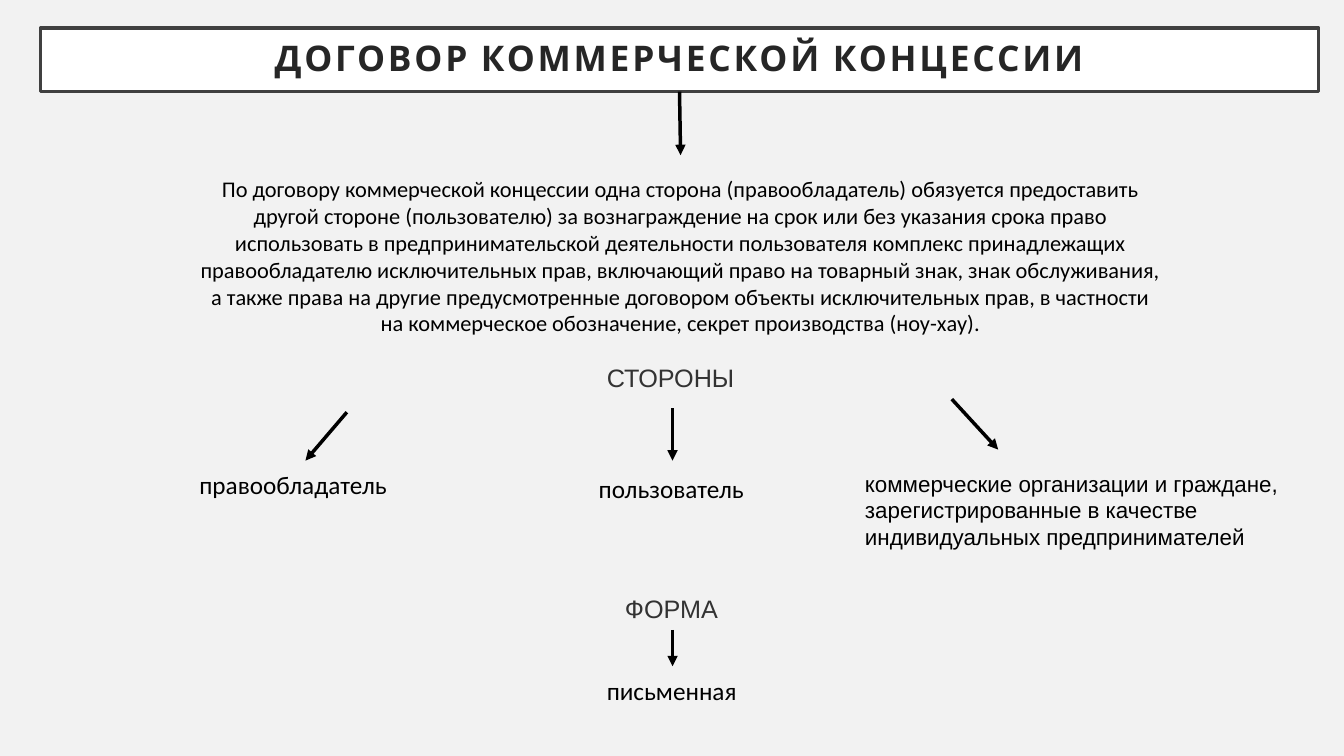
from dataclasses import dataclass

from lxml import etree
from pptx import Presentation
from pptx import util as u
from pptx.dml.color import RGBColor
from pptx.enum import shapes, text
from pptx.oxml import ns

WIDTH, HEIGHT = u.Inches(13.33), u.Inches(7.5)
BLACK, GREY = "000000", "333333"


@dataclass(frozen=True)
class Label:
    """Text with its box in percent of the slide's width and height."""
    words: str
    left: float
    top: float
    width: float
    height: float = 5.33
    font: str = "Calibri"
    size: float = 18
    color: str = BLACK
    wrap: bool = False
    centred: bool = False


@dataclass(frozen=True)
class Arrow:
    """Arrow from start to tip in percent of the slide's width and height."""
    start: tuple[float, float]
    tip: tuple[float, float]


HEADING = Label("ДОГОВОР КОММЕРЧЕСКОЙ КОНЦЕССИИ", 3, 3.73, 95.12, 8.4,
                "Cabin", 25.2, "262626", True, True)
DEFINITION = (
    "По договору коммерческой концессии одна сторона (правообладатель) обязуется "
    "предоставить другой стороне (пользователю) за вознаграждение на срок или без "
    "указания срока право использовать в предпринимательской деятельности пользователя "
    "комплекс принадлежащих правообладателю исключительных прав, включающий право на "
    "товарный знак, знак обслуживания, а также права на другие предусмотренные договором "
    "объекты исключительных прав, в частности на коммерческое обозначение, секрет "
    "производства (ноу-хау)."
)
ELIGIBLE = ("коммерческие организации и граждане, зарегистрированные в качестве "
            "индивидуальных предпринимателей")
LABELS = [
    Label(DEFINITION, 14.1, 22.53, 73.07, 22.93, size=16, wrap=True, centred=True),
    Label("СТОРОНЫ", 44.41, 47.33, 50.04, font="Arial", color=GREY, wrap=True),
    Label("правообладатель", 14.1, 61.47, 15.6),
    Label("пользователь", 43.81, 62, 12.45),
    Label(ELIGIBLE, 63.62, 61.47, 38.11, 12.13, "Arial", 16, wrap=True),
    Label("ФОРМА", 45.76, 77.87, 8.48, font="Arial", color=GREY),
    Label("письменная", 44.41, 88.67, 11.25),
]
TO_DEFINITION = Arrow((50.56, 12.13), (50.64, 20.53))
ARROWS = [
    Arrow((50.04, 54), (50.04, 60.93)),
    Arrow((25.81, 54.53), (22.73, 60.93)),
    Arrow((70.82, 52.8), (74.27, 59.47)),
    Arrow((50.04, 83.33), (50.04, 88.13)),
]


def rgb(value: str) -> RGBColor:
    """Turn a hex string into a colour."""
    return RGBColor.from_string(value)


def across(share: float) -> int:
    """Convert percent of the slide's width to a length."""
    return round(WIDTH * share / 100)


def down(share: float) -> int:
    """Convert percent of the slide's height to a length."""
    return round(HEIGHT * share / 100)


def write(shape, label: Label):
    """Write a label into a shape and return its run."""
    frame = shape.text_frame
    frame.word_wrap = label.wrap
    frame.auto_size = text.MSO_AUTO_SIZE.SHAPE_TO_FIT_TEXT
    paragraph = frame.paragraphs[0]
    paragraph.alignment = text.PP_ALIGN.CENTER if label.centred else text.PP_ALIGN.LEFT
    run = paragraph.add_run()
    run.text = label.words
    run.font.name = label.font
    run.font.size = u.Pt(label.size)
    run.font.color.rgb = rgb(label.color)
    return run


def draw_heading(slide, label: Label):
    """Format the title placeholder as a framed white bar."""
    heading = slide.shapes.title
    heading.left, heading.top = across(label.left), down(label.top)
    heading.width, heading.height = across(label.width), down(label.height)
    heading.fill.solid()
    heading.fill.fore_color.rgb = rgb("FFFFFF")
    heading.line.color.rgb = rgb("404040")
    heading.line.width = u.Pt(2.5)
    run = write(heading, label)
    run.font.bold = True
    run.font._element.set("spc", "200")
    frame = heading.text_frame
    frame.auto_size = text.MSO_AUTO_SIZE.NONE
    frame.vertical_anchor = text.MSO_ANCHOR.MIDDLE
    frame.margin_left = frame.margin_right = u.Inches(0.2)
    frame.margin_top = frame.margin_bottom = u.Inches(0.2)
    frame.paragraphs[0].line_spacing = 0.9
    return heading


def draw_label(slide, label: Label) -> None:
    """Add a text box for a label."""
    box = slide.shapes.add_textbox(across(label.left), down(label.top),
                                   across(label.width), down(label.height))
    write(box, label)


def draw_arrow(slide, arrow: Arrow):
    """Add a black connector with a triangular head."""
    connector = slide.shapes.add_connector(
        shapes.MSO_CONNECTOR.STRAIGHT, across(arrow.start[0]), down(arrow.start[1]),
        across(arrow.tip[0]), down(arrow.tip[1]))
    connector.line.color.rgb = rgb(BLACK)
    connector.line.width = u.Pt(2.5)
    etree.SubElement(connector.line._get_or_add_ln(), ns.qn("a:tailEnd"), type="triangle")
    etree.SubElement(connector._element.spPr, ns.qn("a:effectLst"))
    return connector


def main() -> None:
    """Build and save the slide."""
    deck = Presentation()
    deck.slide_width, deck.slide_height = WIDTH, HEIGHT
    slide = deck.slides.add_slide(deck.slide_layouts[5])
    slide.background.fill.solid()
    slide.background.fill.fore_color.rgb = rgb("F2F2F2")
    heading = draw_heading(slide, HEADING)
    draw_arrow(slide, TO_DEFINITION).begin_connect(heading, 2)
    for label in LABELS:
        draw_label(slide, label)
    for arrow in ARROWS:
        draw_arrow(slide, arrow)
    deck.save("out.pptx")


if __name__ == "__main__":
    main()
